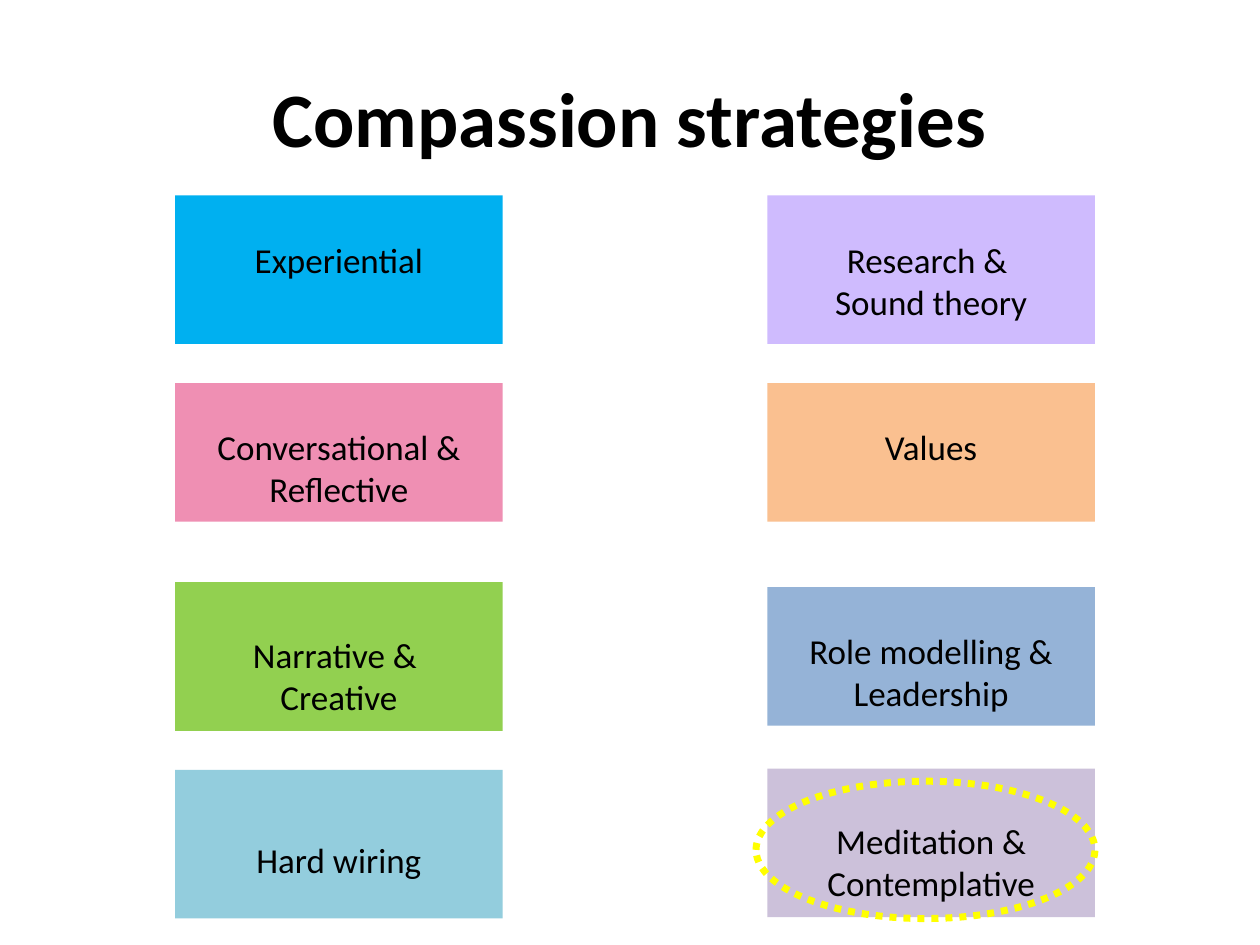
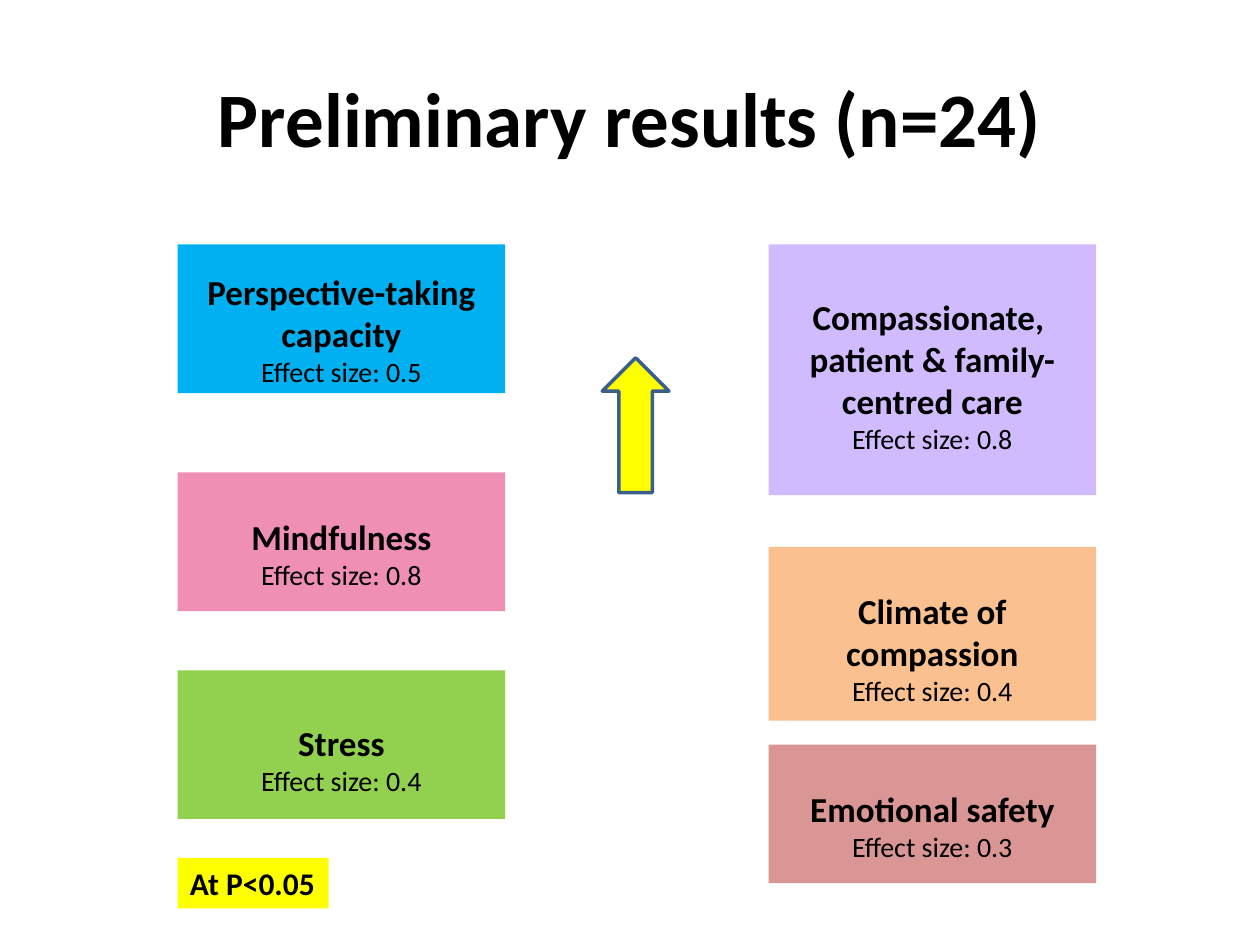
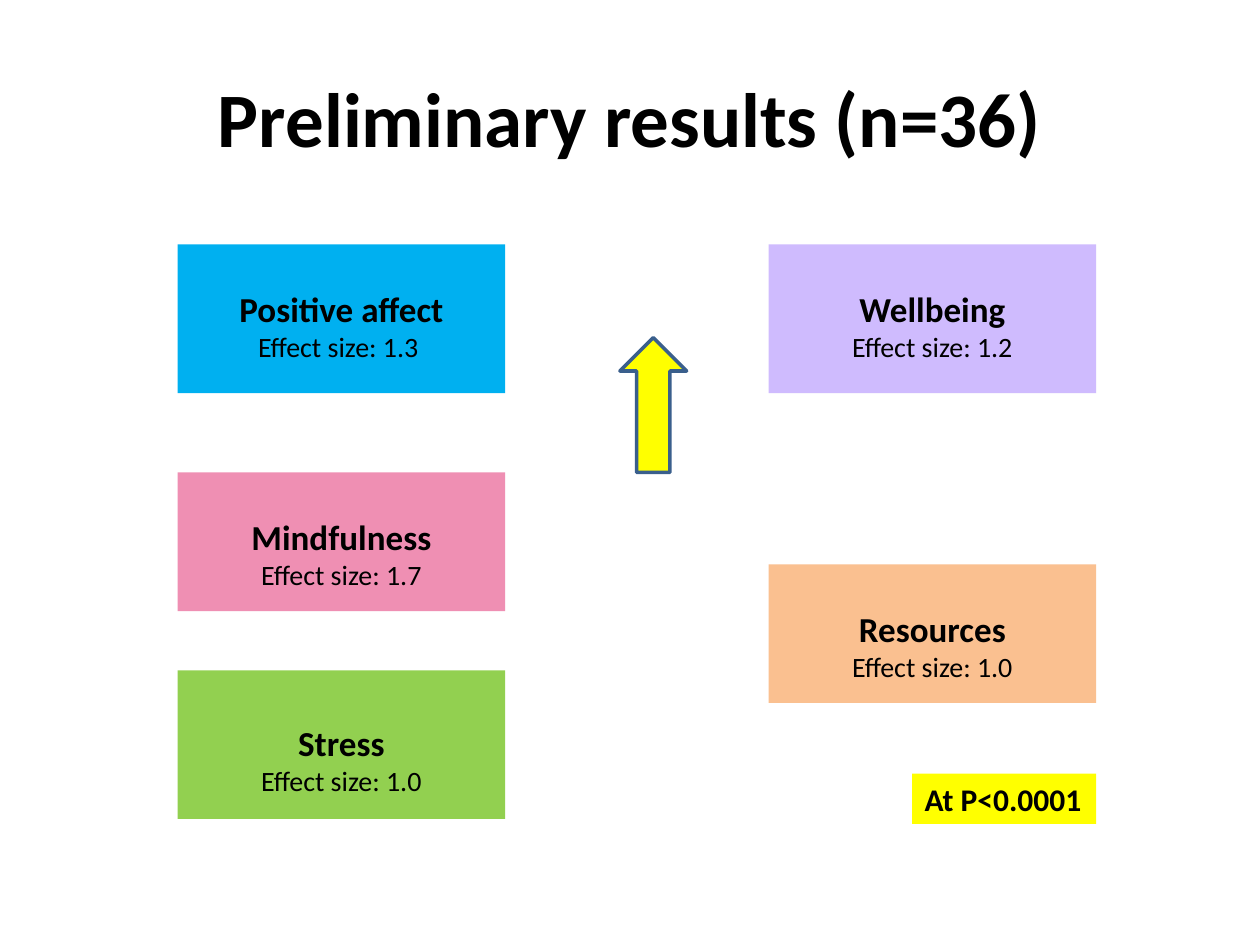
from pptx import Presentation
from pptx.dml.color import RGBColor
from pptx.enum.dml import MSO_LINE
from pptx.enum.shapes import MSO_SHAPE as SHAPE
from pptx.enum.text import MSO_ANCHOR as ANCHOR, MSO_AUTO_SIZE as AUTO_SIZE, PP_ALIGN as ALIGN
from pptx.util import Inches, Pt

FONT = "Calibri"
BLACK, YELLOW, ARROW_EDGE = "000000", "FFFF00", "3A5F8C"
BLUE, PINK, GREEN, AQUA = "00B0F0", "EF8FB3", "92D050", "93CDDD"
LILAC, ORANGE, STEEL, MAUVE, ROSE = "CFBBFE", "FAC090", "95B3D7", "CCC1DA", "D99694"

BOX_WIDTH, LOW, HIGH = 2.6, 1.1, 1.18
LINE_HEIGHT = 1.22  # Calibri line height as a multiple of the text size
HEADING, DETAIL = 20, 16


def rgb(hex_colour):
    return RGBColor.from_string(hex_colour)


class Deck:
    def __init__(self):
        self.prs = Presentation()
        self.prs.slide_width, self.prs.slide_height = Inches(10), Inches(7.5)
        self.slide = None

    def new_slide(self, heading):
        self.slide = self.prs.slides.add_slide(self.prs.slide_layouts[5])
        title = self.slide.shapes.title
        title.left, title.top = Inches(0.5), Inches(0.3)
        title.width, title.height = Inches(9), Inches(1.25)
        title.text_frame.vertical_anchor = ANCHOR.MIDDLE
        self.set_text(title.text_frame.paragraphs[0], heading, 44, True)

    def set_text(self, paragraph, text, size, bold=False, align=ALIGN.CENTER):
        paragraph.text, paragraph.alignment = text, align
        font = paragraph.font
        font.name, font.size, font.bold = FONT, Pt(size), bold
        font.color.rgb = rgb(BLACK)

    def shape(self, kind, left, top, width, height, fill=None, edge=None, weight=1):
        shape = self.slide.shapes.add_shape(
            kind, Inches(left), Inches(top), Inches(width), Inches(height))
        shape.shadow.inherit = False
        if fill:
            shape.fill.solid()
            shape.fill.fore_color.rgb = rgb(fill)
        else:
            shape.fill.background()
        if edge:
            shape.line.color.rgb = rgb(edge)
            shape.line.width = Pt(weight)
        else:
            shape.line.fill.background()
        return shape

    def box(self, left, top, height, fill, lead, lines, effect=None):
        """Text starts below a lead given in points of text size."""
        frame = self.shape(SHAPE.RECTANGLE, left, top, BOX_WIDTH, height, fill).text_frame
        frame.margin_left = frame.margin_right = frame.margin_bottom = 0
        frame.margin_top = Pt(lead * LINE_HEIGHT)
        frame.vertical_anchor, frame.word_wrap = ANCHOR.TOP, True
        styled = [(line, HEADING, effect is not None) for line in lines]
        if effect:
            styled.append((f"Effect size: {effect}", DETAIL, False))
        for i, style in enumerate(styled):
            self.set_text(frame.add_paragraph() if i else frame.paragraphs[0], *style)

    def column(self, left, boxes):
        for box in boxes:
            self.box(left, *box)

    def up_arrow(self, left, top):
        self.shape(SHAPE.UP_ARROW, left, top, 0.53, 1.07, YELLOW, ARROW_EDGE, 2)

    def significance(self, left, top, width, text):
        frame = self.shape(SHAPE.RECTANGLE, left, top, width, 0.4, YELLOW).text_frame
        frame.word_wrap, frame.auto_size = False, AUTO_SIZE.SHAPE_TO_FIT_TEXT
        frame.vertical_anchor = ANCHOR.TOP
        self.set_text(frame.paragraphs[0], text, 18, True, ALIGN.LEFT)

    def highlight(self, left, top, width, height):
        ring = self.shape(SHAPE.OVAL, left, top, width, height, edge=YELLOW, weight=4)
        # ROUND_DOT is the preset with short square dots (sysDot)
        ring.line.dash_style = MSO_LINE.ROUND_DOT


def main():
    deck = Deck()

    # Strategies
    deck.new_slide("Compassion strategies")
    deck.column(1.39, [
        (1.55, HIGH, BLUE, 20, ["Experiential"]),
        (3.04, LOW, PINK, 20, ["Conversational & Reflective"]),
        (4.62, HIGH, GREEN, 24, ["Narrative & ", "Creative"]),
        (6.11, HIGH, AQUA, 32, ["Hard wiring"]),
    ])
    deck.column(6.09, [
        (1.55, HIGH, LILAC, 20, ["Research & ", "Sound theory"]),
        (3.04, LOW, ORANGE, 20, ["Values"]),
        (4.66, LOW, STEEL, 20, ["Role modelling & Leadership"]),
        (6.1, HIGH, MAUVE, 24, ["Meditation & Contemplative"]),
    ])
    deck.highlight(6, 6.2, 2.69, 1.09)

    # Results, 24 participants
    deck.new_slide("Preliminary results (n=24)")
    deck.column(1.41, [
        (1.94, HIGH, BLUE, 12, ["Perspective-taking capacity"], "0.5"),
        (3.75, LOW, PINK, 20, ["Mindfulness"], "0.8"),
        (5.32, HIGH, GREEN, 24, ["Stress"], "0.4"),
    ])
    deck.column(6.1, [
        (1.94, 1.99, LILAC, 24, ["Compassionate, ", "patient & family-centred care"], "0.8"),
        (4.34, 1.38, ORANGE, 20, ["Climate of compassion"], "0.4"),
        (5.91, LOW, ROSE, 20, ["Emotional safety"], "0.3"),
    ])
    deck.up_arrow(4.78, 2.84)
    deck.significance(1.41, 6.81, 1.2, "At P<0.05")

    # Results, 36 participants
    deck.new_slide("Preliminary results (n=36)")
    deck.column(1.41, [
        (1.94, HIGH, BLUE, 20, ["Positive affect"], "1.3 "),
        (3.75, LOW, PINK, 20, ["Mindfulness"], "1.7"),
        (5.32, HIGH, GREEN, 24, ["Stress"], "1.0"),
    ])
    deck.column(6.1, [
        (1.94, HIGH, LILAC, 20, ["Wellbeing"], "1.2"),
        (4.48, LOW, ORANGE, 20, ["Resources"], "1.0"),
    ])
    deck.up_arrow(4.92, 2.68)
    deck.significance(7.24, 6.14, 1.46, "At P<0.0001")

    deck.prs.save("out.pptx")


if __name__ == "__main__":
    main()
